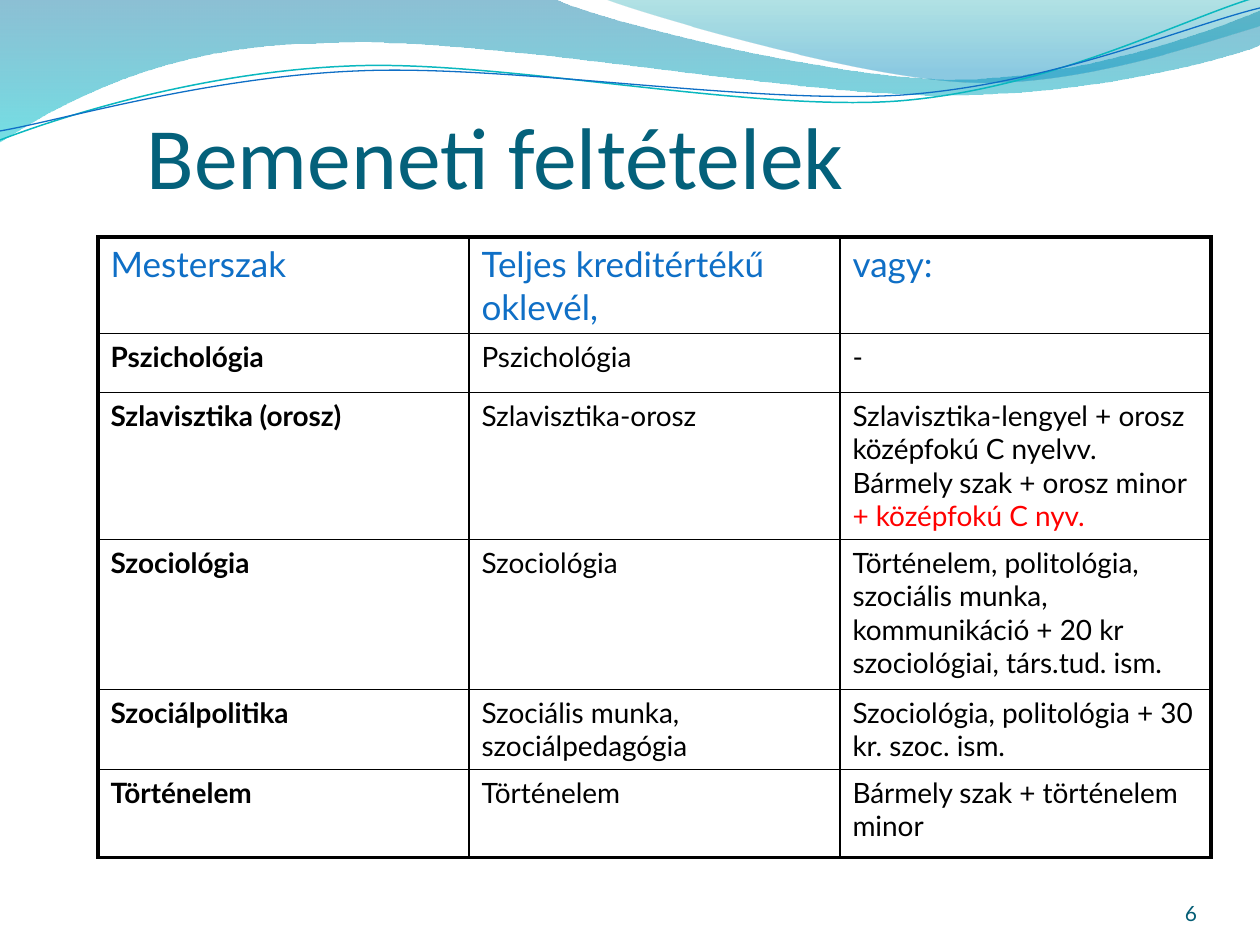
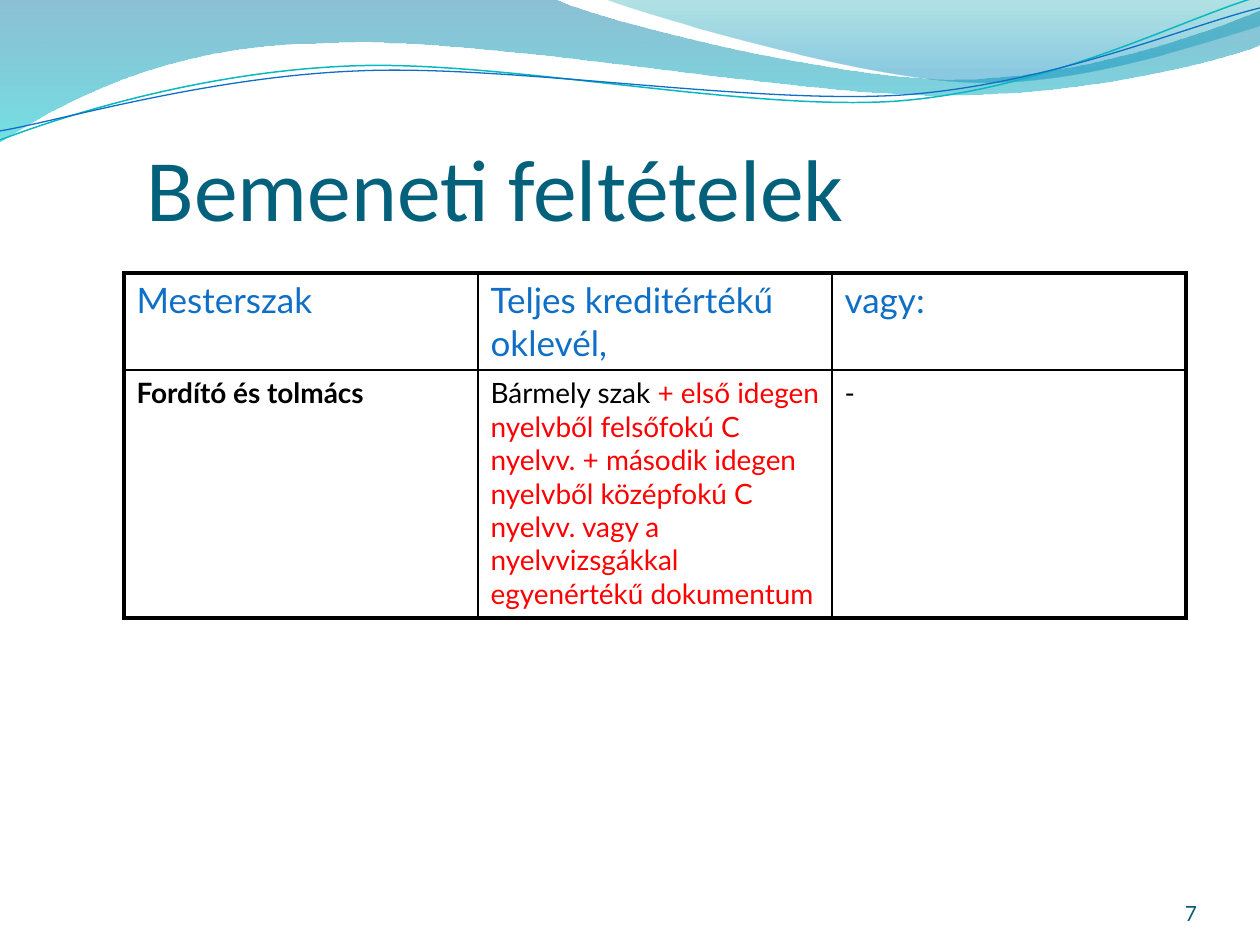
from dataclasses import dataclass

from lxml import etree
from pptx import Presentation
from pptx import util as u
from pptx.dml.color import RGBColor
from pptx.enum import text
from pptx.oxml import ns

PX = 914400 / 126
WIDTH, HEIGHT = 1260, 945


@dataclass(frozen=True)
class Theme:
    """Colours, fonts, type sizes and line widths of the deck."""
    title: str = "04617B"
    header: str = "0F6FC6"
    body: str = "000000"
    accent: str = "FF0000"
    number: str = "045D75"
    teal_line: str = "0AB8BF"
    blue_line: str = "0F6FC6"
    wave: tuple = ((0, "0074A1", 45), (1, "00C6CF", 55))
    crest: tuple = ((0, "00A1A9", 30), (0.8, "008BBF", 45))
    title_font: str = "Calibri"
    body_font: str = "Lato"
    title_pt: int = 50
    header_pt: int = 20
    body_pt: int = 16
    number_pt: int = 12
    outer_pt: float = 2.25
    inner_pt: float = 1


T = Theme()

WAVE = [(0, -1), (554, -1), (600, 21, 837, 79, 955, 79),
        (1075, 79, 1207, 33, 1260, 11), (1261, 45),
        (1239, 55, 1096, 96, 940, 95), (784, 95, 481, 35, 324, 43),
        (163, 44, 58, 105, -1, 142)]
CREST = [(604, -1), (641, 14, 859, 78, 969, 82),
         (1079, 87, 1211, 40, 1260, 26), (1260, 0)]
TEAL_CURVE = [(0, 140), (60, 117, 199, 72, 349, 66),
              (498, 59, 747, 112, 898, 101), (1050, 89, 1182, 19, 1257, -3)]
BLUE_CURVE = [(0, 131), (59, 121, 207, 77, 357, 71),
              (508, 64, 752, 105, 903, 95), (1053, 84, 1186, 26, 1260, 8)]

TITLE = "Bemeneti feltételek"
HEADER = ("Mesterszak", "Teljes kreditértékű oklevél,", "vagy:")
SLIDES = [
    dict(number=6, title_box=(147, 42, 1040, 165), table_at=(98, 237),
         col_width=371, heights=(96, 59, 147, 150, 80, 88), rows=[
             ("Pszichológia", "Pszichológia", "-"),
             ("Szlavisztika (orosz)", "Szlavisztika-orosz",
              "Szlavisztika-lengyel + orosz középfokú C nyelvv.\v"
              "Bármely szak + orosz minor |+ középfokú C nyv."),
             ("Szociológia", "Szociológia",
              "Történelem, politológia, szociális munka, kommunikáció + 20 kr "
              "szociológiai, társ.tud. ism."),
             ("Szociálpolitika", "Szociális munka, szociálpedagógia",
              "Szociológia, politológia + 30 kr. szoc. ism."),
             ("Történelem", "Történelem", "Bármely szak + történelem minor")]),
    dict(number=7, title_box=(147, 42, 1040, 197), table_at=(124, 273),
         col_width=354, heights=(97, 248), rows=[
             ("Fordító és tolmács",
              "Bármely szak |+ első idegen nyelvből felsőfokú C nyelvv. + második "
              "idegen nyelvből középfokú C nyelvv. vagy a nyelvvizsgákkal "
              "egyenértékű dokumentum", "-")]),
]


def emu(*lengths):
    """Turn px lengths into EMU."""
    return [u.Emu(round(n * PX)) for n in lengths]


def style(r, font, size, color, bold=False):
    """Format one run."""
    r.font.name, r.font.size, r.font.bold = font, u.Pt(size), bold
    r.font.color.rgb = RGBColor.from_string(color)


def add_outline(slide, outline, close):
    """Draw points and cubic segments as a freeform without shadow."""
    points = [emu(*seg[i:i + 2]) for seg in outline for i in range(0, len(seg), 2)]
    builder = slide.shapes.build_freeform(*points[0])
    builder.add_line_segments(points[1:], close=close)
    sp = builder.convert_to_shape()
    sp.shadow.inherit = False
    lines = iter(list(sp.element.iter(ns.qn("a:lnTo"))))
    for seg in outline[1:]:
        first = next(lines)
        if len(seg) == 6:
            curve = etree.Element(ns.qn("a:cubicBezTo"))
            first.addprevious(curve)
            for ln in (first, next(lines), next(lines)):
                curve.append(ln[0])
                ln.getparent().remove(ln)
    return sp


def add_band(slide, outline, stops):
    """Draw a wave filled from top to bottom with a translucent gradient."""
    sp = add_outline(slide, outline, True)
    sp.line.fill.background()
    sp.fill.gradient()
    sp.fill.gradient_angle = 270
    for stop, (position, color, _) in zip(sp.fill.gradient_stops, stops):
        stop.position = position
        stop.color.rgb = RGBColor.from_string(color)
    for clr, (_, _, alpha) in zip(sp.element.iter(ns.qn("a:srgbClr")), stops):
        etree.SubElement(clr, ns.qn("a:alpha"), val=str(alpha * 1000))


def add_curve(slide, outline, color, width):
    """Draw a thin open curve."""
    sp = add_outline(slide, outline, False)
    sp.fill.background()
    sp.line.color.rgb = RGBColor.from_string(color)
    sp.line.width = u.Pt(width)


def add_waves(slide):
    """Draw the bands and curves along the top of the slide."""
    add_band(slide, WAVE, T.wave)
    add_band(slide, CREST, T.crest)
    add_curve(slide, TEAL_CURVE, T.teal_line, 0.85)
    add_curve(slide, BLUE_CURVE, T.blue_line, 0.75)


def add_label(slide, box, words, font, size, color, align, top=0):
    """Place one line of text at the bottom of a box."""
    tf = slide.shapes.add_textbox(*emu(*box)).text_frame
    tf.word_wrap = True
    tf.vertical_anchor = text.MSO_ANCHOR.BOTTOM
    tf.margin_left = tf.margin_right = tf.margin_bottom = 0
    tf.margin_top = emu(top)[0]
    tf.text = words
    p = tf.paragraphs[0]
    p.alignment = align
    style(p.runs[0], font, size, color)


def set_borders(cell, widths):
    """Set the left, right, top and bottom borders of a cell."""
    pr = cell._tc.get_or_add_tcPr()
    for side, width in zip("LRTB", widths):
        ln = etree.SubElement(pr, ns.qn(f"a:ln{side}"), w=str(u.Pt(width)))
        fill = etree.SubElement(ln, ns.qn("a:solidFill"))
        etree.SubElement(fill, ns.qn("a:srgbClr"), val=T.body)


def fill_cell(cell, words, size, color, bold):
    """Write a cell; words after a bar take the accent colour."""
    plain, _, marked = words.partition("|")
    p = cell.text_frame.paragraphs[0]
    p.text = plain
    for r in p.runs:
        style(r, T.body_font, size, color, bold)
    if marked:
        r = p.add_run()
        r.text = marked
        style(r, T.body_font, size, T.accent)


def add_requirements(slide, at, col_width, heights, rows):
    """Place the table of entry requirements under its header row."""
    grid = [HEADER, *rows]
    n_rows, n_cols = len(grid), len(HEADER)
    frame = slide.shapes.add_table(
        n_rows, n_cols, *emu(*at, col_width * n_cols, sum(heights)))
    table = frame.table
    table.first_row = table.horz_banding = False
    for col in table.columns:
        col.width = emu(col_width)[0]
    for i, (height, row) in enumerate(zip(heights, grid)):
        table.rows[i].height = emu(height)[0]
        for j, words in enumerate(row):
            cell = table.cell(i, j)
            edges = (j == 0, j == n_cols - 1, i == 0, i == n_rows - 1)
            set_borders(cell, [T.outer_pt if e else T.inner_pt for e in edges])
            cell.fill.background()
            if i == 0:
                fill_cell(cell, words, T.header_pt, T.header, False)
            else:
                fill_cell(cell, words, T.body_pt, T.body, j == 0)


def add_requirements_slide(prs, number, title_box, table_at, col_width, heights, rows):
    """Add a slide with waves, title, table and number."""
    slide = prs.slides.add_slide(prs.slide_layouts[6])
    add_waves(slide)
    add_label(slide, title_box, TITLE, T.title_font, T.title_pt, T.title,
              text.PP_ALIGN.LEFT, top=6)
    add_requirements(slide, table_at, col_width, heights, rows)
    add_label(slide, (1092, 876, 105, 50), str(number), T.body_font, T.number_pt,
              T.number, text.PP_ALIGN.RIGHT)


def main():
    """Build the deck."""
    prs = Presentation()
    prs.slide_width, prs.slide_height = emu(WIDTH, HEIGHT)
    for content in SLIDES:
        add_requirements_slide(prs, **content)
    prs.save("out.pptx")


if __name__ == "__main__":
    main()
